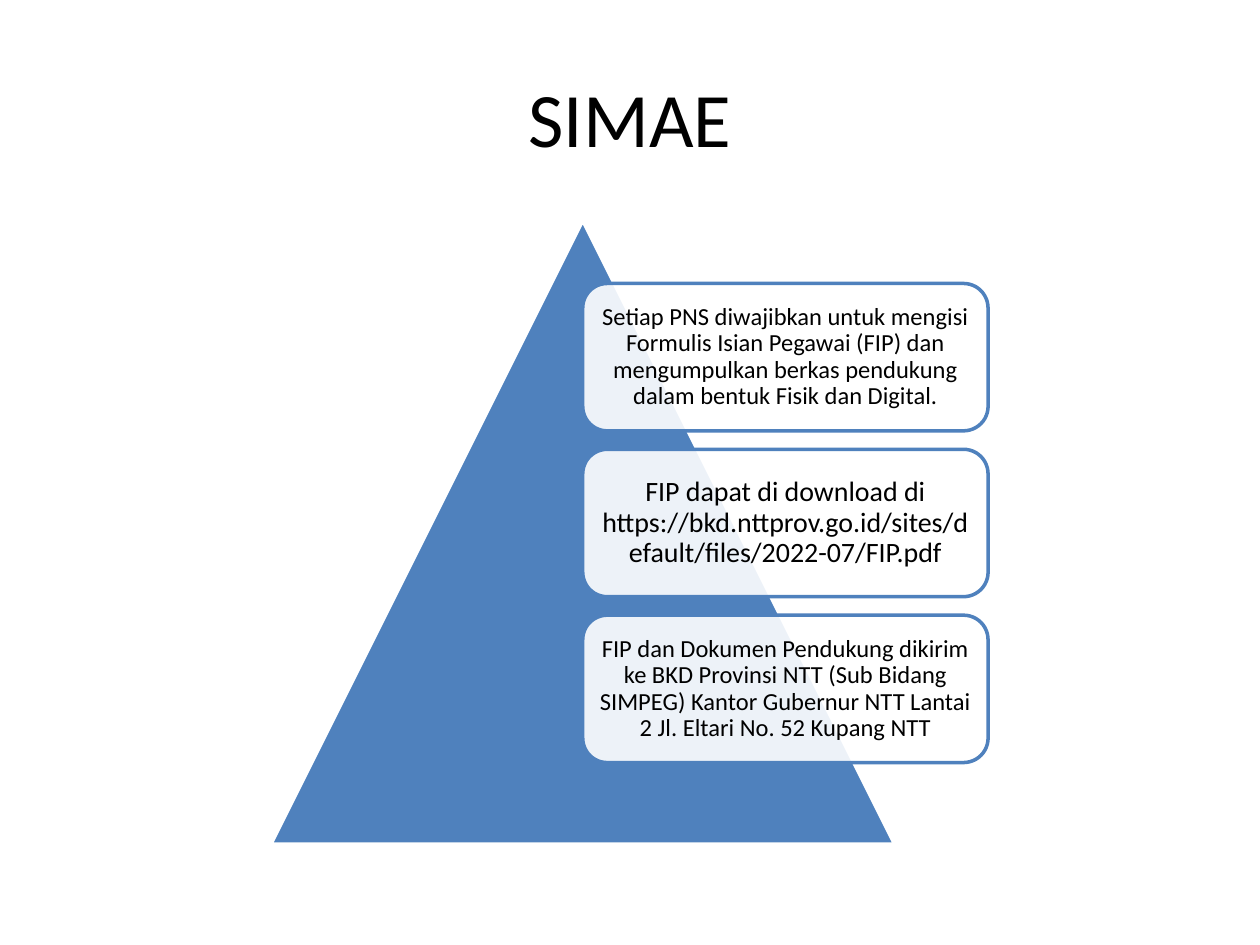
import pptx
import pptx.dml.color
import pptx.enum.shapes
import pptx.enum.text
import pptx.oxml.ns
import pptx.util
from lxml import etree
from pptx.util import Inches

BLUE = pptx.dml.color.RGBColor(0x4F, 0x81, 0xBD)
WHITE = pptx.dml.color.RGBColor(0xFF, 0xFF, 0xFF)
BLACK = pptx.dml.color.RGBColor(0x00, 0x00, 0x00)

STEPS = [
    ("Setiap PNS diwajibkan untuk mengisi Formulis Isian Pegawai (FIP) dan "
     "mengumpulkan berkas pendukung dalam bentuk Fisik dan Digital.", 14, 0.06),
    ("FIP dapat di download di "
     "https://bkd.nttprov.go.id/sites/default/files/2022-07/FIP.pdf", 16, 0.07),
    ("FIP dan Dokumen Pendukung dikirim ke BKD Provinsi NTT (Sub Bidang SIMPEG) "
     "Kantor Gubernur NTT Lantai 2 Jl. Eltari No. 52 Kupang NTT", 14, 0.06),
]


def write_text(shape, text, size, inset=0.1, line_spacing=1.0):
    """Write centred black text into a shape."""
    frame = shape.text_frame
    frame.word_wrap = True
    frame.vertical_anchor = pptx.enum.text.MSO_ANCHOR.MIDDLE
    frame.margin_left = frame.margin_right = Inches(inset)
    frame.margin_top = frame.margin_bottom = Inches(inset)
    frame.text = text
    paragraph = frame.paragraphs[0]
    paragraph.alignment = pptx.enum.text.PP_ALIGN.CENTER
    paragraph.line_spacing = line_spacing
    paragraph.font.name = "Calibri"
    paragraph.font.size = pptx.util.Pt(size)
    paragraph.font.color.rgb = BLACK


def add_block(slide, preset, box, fill, line):
    """Add a filled, outlined preset shape without a shadow."""
    block = slide.shapes.add_shape(preset, *box)
    block.shadow.inherit = False
    block.fill.solid()
    block.fill.fore_color.rgb = fill
    block.line.color.rgb = line
    block.line.width = pptx.util.Pt(2)
    return block


def set_opacity(shape, percent):
    """Make the solid fill of a shape partly transparent."""
    fill = shape.fill._xPr.find(pptx.oxml.ns.qn("a:solidFill"))
    alpha = etree.SubElement(fill[0], pptx.oxml.ns.qn("a:alpha"))
    alpha.set("val", str(percent * 1000))


def place_title(slide, left, top, width, height):
    """Place the slide title in the given box."""
    title = slide.shapes.title
    title.left, title.top, title.width, title.height = left, top, width, height
    write_text(title, "SIMAE", 44)


def place_pyramid(slide, left, top, side):
    """Place the triangle and the step cards stacked over its right half."""
    shapes = pptx.enum.shapes.MSO_SHAPE
    add_block(slide, shapes.ISOSCELES_TRIANGLE, (left, top, side, side), BLUE, WHITE)
    card_left = left + side // 2
    card_width = int(side * 0.65)
    card_height = Inches(1.17)
    pitch = int(card_height * 1.125)
    first_top = top + Inches(0.5)
    for index, (text, size, inset) in enumerate(STEPS):
        box = (card_left, first_top + index * pitch, card_width, card_height)
        card = add_block(slide, shapes.ROUNDED_RECTANGLE, box, WHITE, BLUE)
        set_opacity(card, 90)
        write_text(card, text, size, inset=inset, line_spacing=0.9)


def main():
    """Build the slide and save it."""
    deck = pptx.Presentation()
    deck.slide_width, deck.slide_height = Inches(10), Inches(7.5)
    slide = deck.slides.add_slide(deck.slide_layouts.get_by_name("Title Only"))
    place_title(slide, Inches(0.5), Inches(0.3), Inches(9), Inches(1.25))
    place_pyramid(slide, Inches(2.15), Inches(1.75), Inches(4.95))
    deck.save("out.pptx")


if __name__ == "__main__":
    main()
